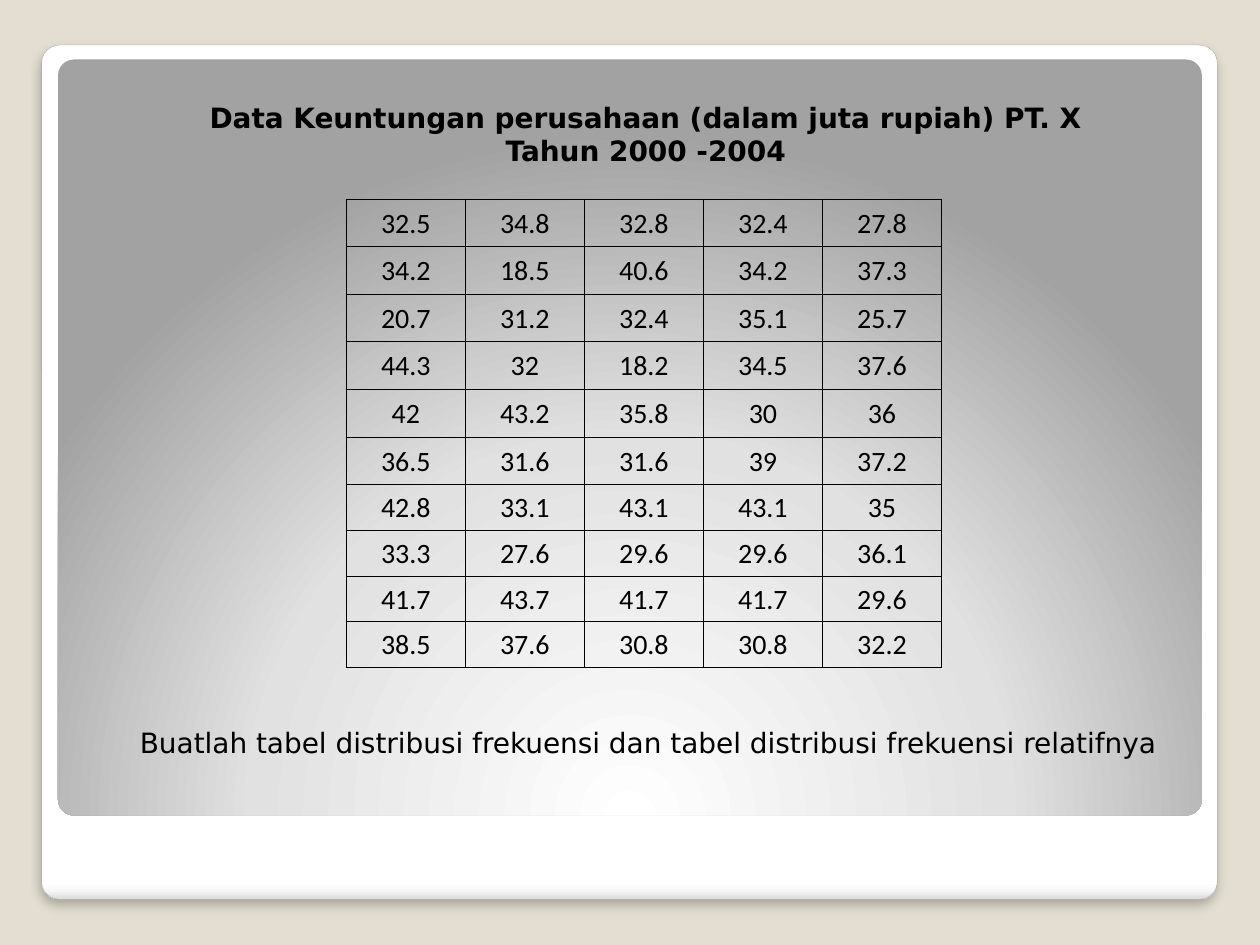
from lxml import etree
from pptx import Presentation
from pptx.dml.color import RGBColor
from pptx.enum.shapes import MSO_SHAPE as Shape
from pptx.enum.text import MSO_ANCHOR as Anchor, PP_ALIGN as Align
from pptx.oxml import parse_xml
from pptx.oxml.ns import nsdecls, qn
from pptx.util import Cm, Pt

# Content
TITLE = ["Data Keuntungan perusahaan (dalam juta rupiah) PT. X", "Tahun 2000 -2004"]
TASK = ["Buatlah tabel distribusi frekuensi dan tabel distribusi frekuensi relatifnya"]
PROFITS = [
    ("32.5", "34.8", "32.8", "32.4", "27.8"),
    ("34.2", "18.5", "40.6", "34.2", "37.3"),
    ("20.7", "31.2", "32.4", "35.1", "25.7"),
    ("44.3", "32", "18.2", "34.5", "37.6"),
    ("42", "43.2", "35.8", "30", "36"),
    ("36.5", "31.6", "31.6", "39", "37.2"),
    ("42.8", "33.1", "43.1", "43.1", "35"),
    ("33.3", "27.6", "29.6", "29.6", "36.1"),
    ("41.7", "43.7", "41.7", "41.7", "29.6"),
    ("38.5", "37.6", "30.8", "30.8", "32.2"),
]
COLORS = {"background": "E3DED1", "outline": "A4A4A4", "text": "000000"}
CARD_STOPS = [(0, "FFFFFF"), (98, "FFFFFF"), (99, "F7F7F7"), (100, "DADADA")]
PANEL_STOPS = [(0, "FFFFFF"), (55, "E1E1E1"), (100, "A2A2A2")]
LINEAR = '<a:lin ang="5400000" scaled="0"/>'
RADIAL = ('<a:path path="circle"><a:fillToRect l="50000" t="175000" '
          'r="50000" b="-75000"/></a:path>')
SHADOW = (f'<a:effectLst {nsdecls("a")}><a:outerShdw blurRad="76200" dist="50800" '
          'dir="5400000" algn="t" rotWithShape="0"><a:srgbClr val="000000">'
          '<a:alpha val="25000"/></a:srgbClr></a:outerShdw></a:effectLst>')

# Table measures in cm: six taller rows, then four shorter ones
TABLE_LEFT, TABLE_TOP, COLUMN_WIDTH = 6.98, 4.01, 2.4
ROW_HEIGHTS = [0.96] * 6 + [0.92] * 4


def rgb(name):
    return RGBColor.from_string(COLORS[name])


def add_rounded(slide, box, stops, direction):
    shape = slide.shapes.add_shape(Shape.ROUNDED_RECTANGLE, *map(Cm, box))
    shape.adjustments[0] = 0.021
    shape.shadow.inherit = False
    shape.line.fill.background()
    stop_xml = "".join(f'<a:gs pos="{position * 1000}"><a:srgbClr val="{color}"/></a:gs>'
                       for position, color in stops)
    gradient = parse_xml(f'<a:gradFill {nsdecls("a")} rotWithShape="1">'
                         f'<a:gsLst>{stop_xml}</a:gsLst>{direction}</a:gradFill>')
    shape._element.spPr.find(qn("a:prstGeom")).addnext(gradient)
    return shape


def style_paragraph(paragraph, text, font_name, align, bold=False):
    paragraph.text = text
    paragraph.alignment = align
    font = paragraph.font
    font.name, font.size, font.bold = font_name, Pt(16), bold
    font.color.rgb = rgb("text")


def add_text(slide, box, lines, align, bold=False, wrap=True):
    frame = slide.shapes.add_textbox(*map(Cm, box)).text_frame
    frame.word_wrap = wrap
    for index, line in enumerate(lines):
        paragraph = frame.add_paragraph() if index else frame.paragraphs[0]
        style_paragraph(paragraph, line, "DejaVu Sans", align, bold)


def add_borders(cell):
    properties = cell._tc.get_or_add_tcPr()
    for side in ("lnL", "lnR", "lnT", "lnB"):
        line = etree.SubElement(properties, qn(f"a:{side}"), w=str(Pt(0.5)))
        fill = etree.SubElement(line, qn("a:solidFill"))
        etree.SubElement(fill, qn("a:srgbClr"), val=COLORS["text"])


def add_profit_table(slide):
    column_count = len(PROFITS[0])
    table = slide.shapes.add_table(
        len(PROFITS), column_count, Cm(TABLE_LEFT), Cm(TABLE_TOP),
        Cm(COLUMN_WIDTH * column_count), Cm(sum(ROW_HEIGHTS))).table
    table.first_row = table.horz_banding = False
    for column in table.columns:
        column.width = Cm(COLUMN_WIDTH)
    for row, height, values in zip(table.rows, ROW_HEIGHTS, PROFITS):
        row.height = Cm(height)
        for cell, value in zip(row.cells, values):
            cell.margin_left = cell.margin_right = cell.margin_top = Cm(0.03)
            cell.margin_bottom = 0
            cell.vertical_anchor = Anchor.MIDDLE
            add_borders(cell)
            cell.fill.background()
            style_paragraph(cell.text_frame.paragraphs[0], value, "Calibri", Align.CENTER)


def main():
    presentation = Presentation()
    presentation.slide_width, presentation.slide_height = Cm(25.4), Cm(19.05)
    slide = presentation.slides.add_slide(presentation.slide_layouts[6])
    slide.background.fill.solid()
    slide.background.fill.fore_color.rgb = rgb("background")

    # Card with a soft shadow, and the grey panel on it
    card = add_rounded(slide, (0.84, 0.91, 23.7, 17.22), CARD_STOPS, LINEAR)
    card.line.color.rgb = rgb("outline")
    card.line.width = Pt(0.16)
    properties = card._element.spPr
    properties.replace(properties.find(qn("a:effectLst")), parse_xml(SHADOW))
    add_rounded(slide, (1.17, 1.2, 23.06, 15.24), PANEL_STOPS, RADIAL)

    # Table, title and task
    add_profit_table(slide)
    add_text(slide, (3.81, 1.9, 18.42, 1.63), TITLE, Align.CENTER, bold=True)
    add_text(slide, (2.57, 14.5, 21.36, 0.94), TASK, Align.LEFT, wrap=False)
    presentation.save("out.pptx")


if __name__ == "__main__":
    main()
